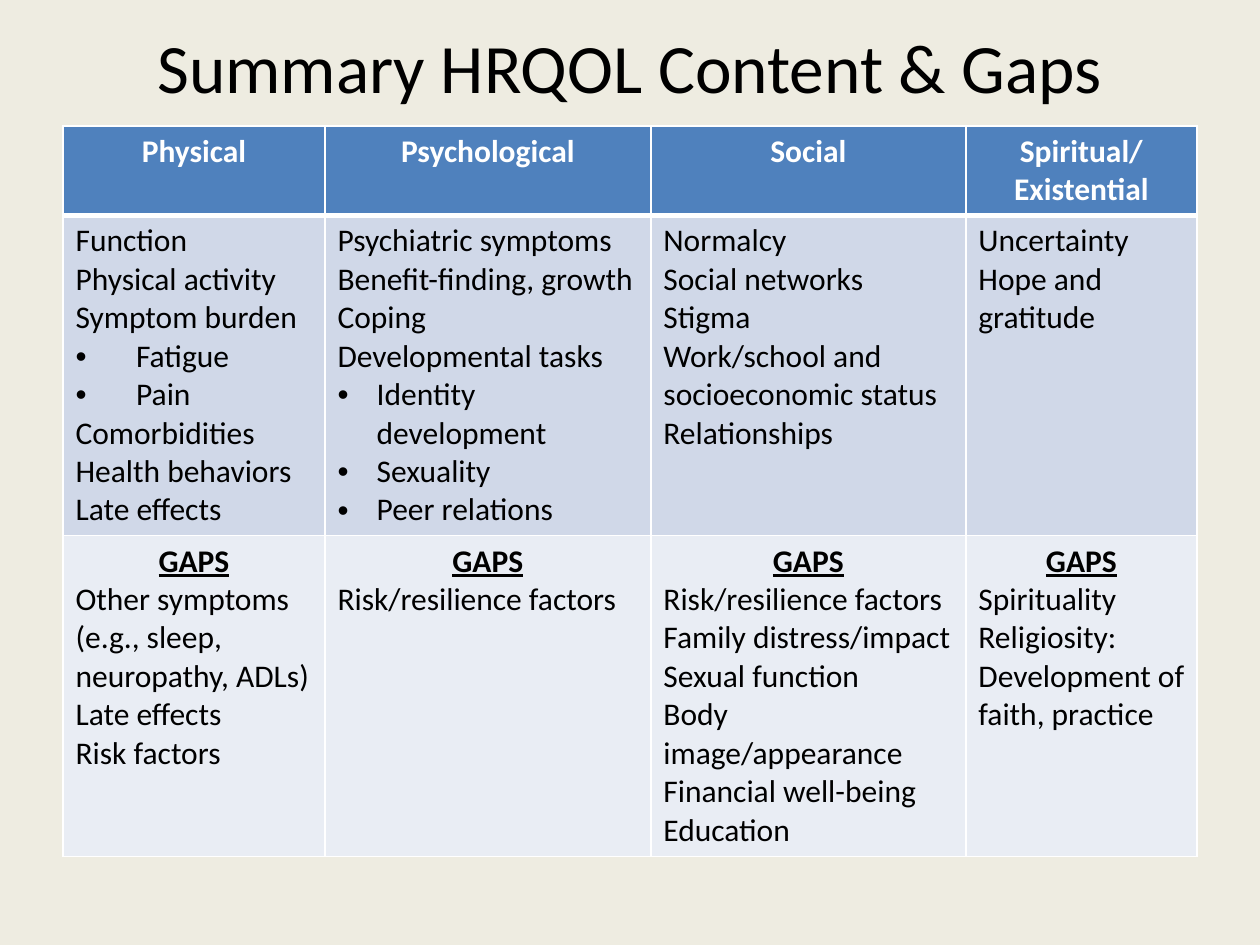
"""Build the summary slide of HRQOL content and gaps by domain."""
from dataclasses import dataclass

from lxml.etree import SubElement as Sub
from pptx import Presentation
from pptx.dml.color import RGBColor as Rgb
from pptx.enum.text import MSO_ANCHOR as Anchor, PP_ALIGN as Align
from pptx.oxml.ns import qn
from pptx.util import Cm, Pt


@dataclass(frozen=True)
class Theme:
    font: str = "Calibri"
    back: str = "EEECE1"
    ink: str = "000000"
    white: str = "FFFFFF"
    head: str = "4F81BD"
    main: str = "D0D8E8"
    gap: str = "E9EDF4"
    big: float = 39.6
    text: float = 18


LOOK = Theme()
TITLE = "Summary HRQOL Content & Gaps"
DOMAINS = [
    {
        "name": ["Physical"], "width": 5.28, "indent": 1.22,
        "main": ["Function", "Physical activity", "Symptom burden", "• Fatigue", "• Pain",
                 "Comorbidities", "Health behaviors", "Late effects"],
        "gaps": ["Other symptoms (e.g., sleep, neuropathy, ADLs)", "Late effects",
                 "Risk factors"],
    },
    {
        "name": ["Psychological"], "width": 6.57, "indent": 0.79,
        "main": ["Psychiatric symptoms", "Benefit-finding, growth", "Coping",
                 "Developmental tasks", "• Identity development", "• Sexuality",
                 "• Peer relations"],
        "gaps": ["Risk/resilience factors"],
    },
    {
        "name": ["Social"], "width": 6.35, "indent": 0,
        "main": ["Normalcy", "Social networks", "Stigma",
                 "Work/school and socioeconomic status", "Relationships"],
        "gaps": ["Risk/resilience factors", "Family distress/impact", "Sexual function",
                 "Body image/appearance", "Financial well-being", "Education"],
    },
    {
        "name": ["Spiritual/", "Existential"], "width": 4.66, "indent": 0,
        "main": ["Uncertainty", "Hope and gratitude"],
        "gaps": ["Spirituality", "Religiosity: Development of faith, practice"],
    },
]
HEIGHTS = [1.8, 6.45, 6.47]
LEFT, TOP = 1.27, 2.54
MARK = "• "


def write(para, text, size=LOOK.text, color=LOOK.ink, bold=False, under=False,
          align=Align.LEFT, indent=0):
    para.alignment = align
    if text.startswith(MARK):
        props = para._p.get_or_add_pPr()
        props.set("marL", str(Cm(indent)))
        props.set("indent", str(-Cm(indent)))
        Sub(props, qn("a:buFont"), typeface="Arial")
        Sub(props, qn("a:buChar"), char=MARK.strip())
    run = para.add_run()
    run.text = text.removeprefix(MARK)
    font = run.font
    font.name, font.size, font.bold, font.underline = LOOK.font, Pt(size), bold, under
    font.color.rgb = Rgb.from_string(color)


def style(cell, fill, base, roof):
    props = cell._tc.get_or_add_tcPr()
    for side, width in (("L", 1), ("R", 1), ("T", roof), ("B", base)):
        line = Sub(props, qn(f"a:ln{side}"), w=str(Pt(width)))
        Sub(Sub(line, qn("a:solidFill")), qn("a:srgbClr"), val=LOOK.white)
    cell.fill.solid()
    cell.fill.fore_color.rgb = Rgb.from_string(fill)


def fill_cell(cell, lines):
    frame = cell.text_frame
    for i, (text, form) in enumerate(lines):
        para = frame.add_paragraph() if i else frame.paragraphs[0]
        write(para, text, **form)


def add_grid(slide):
    wide = sum(item["width"] for item in DOMAINS)
    grid = slide.shapes.add_table(len(HEIGHTS), len(DOMAINS), Cm(LEFT), Cm(TOP),
                                  Cm(wide), Cm(sum(HEIGHTS))).table
    for row, high in zip(grid.rows, HEIGHTS):
        row.height = Cm(high)
    mid = {"bold": True, "align": Align.CENTER}
    for col, item in enumerate(DOMAINS):
        grid.columns[col].width = Cm(item["width"])
        rows = [
            (LOOK.head, 3, 1, [(t, {**mid, "color": LOOK.white}) for t in item["name"]]),
            (LOOK.main, 1, 3, [(t, {"indent": item["indent"]}) for t in item["main"]]),
            (LOOK.gap, 1, 1, [("GAPS", {**mid, "under": True})]
             + [(t, {}) for t in item["gaps"]]),
        ]
        for row, (fill, base, roof, lines) in enumerate(rows):
            cell = grid.cell(row, col)
            style(cell, fill, base, roof)
            fill_cell(cell, lines)


def main():
    deck = Presentation()
    deck.slide_width, deck.slide_height = Cm(25.4), Cm(19.05)
    slide = deck.slides.add_slide(deck.slide_layouts[5])
    slide.background.fill.solid()
    slide.background.fill.fore_color.rgb = Rgb.from_string(LOOK.back)
    title = slide.shapes.title
    title.left, title.top, title.width, title.height = Cm(LEFT), Cm(0.43), Cm(22.86), Cm(1.78)
    title.text_frame.vertical_anchor = Anchor.MIDDLE
    write(title.text_frame.paragraphs[0], TITLE, size=LOOK.big, align=Align.CENTER)
    add_grid(slide)
    deck.save("out.pptx")


if __name__ == "__main__":
    main()
